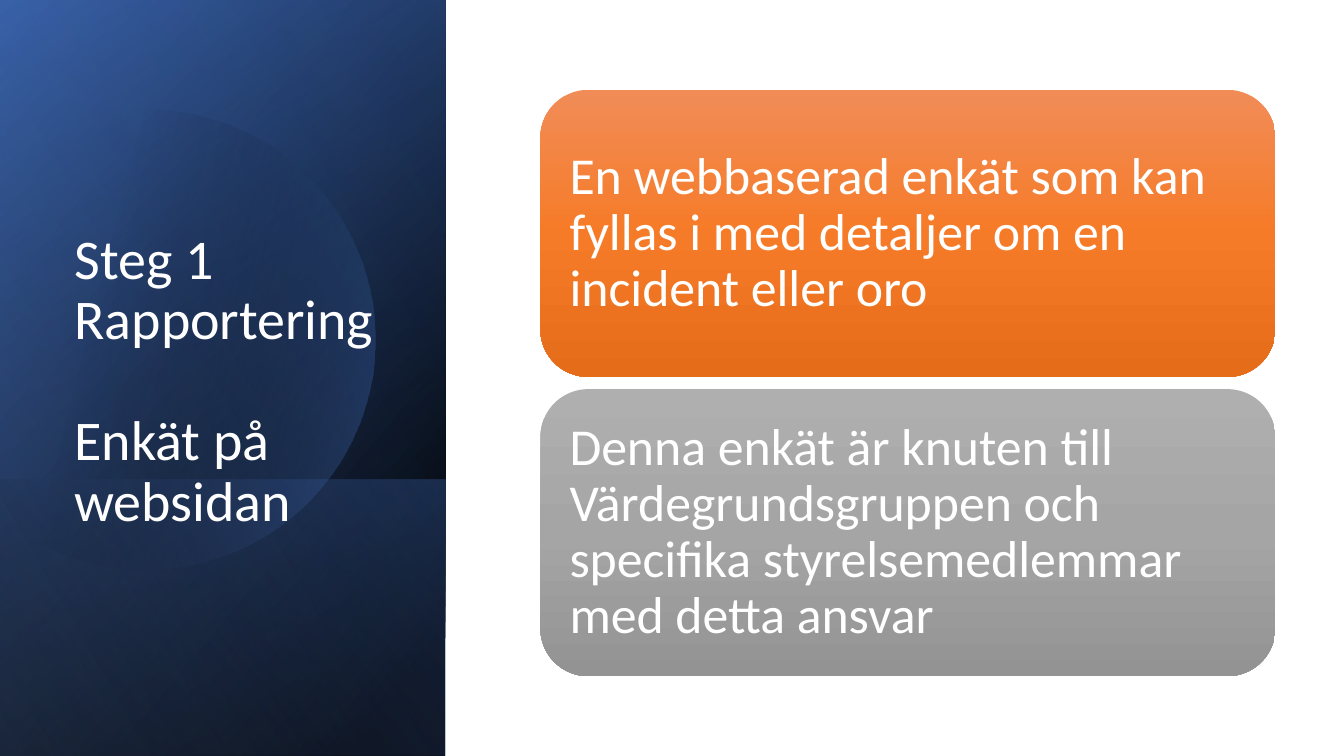
from math import acos, cos, sin

from lxml import etree
from pptx import Presentation
from pptx.dml.color import RGBColor
from pptx.enum.shapes import MSO_SHAPE
from pptx.enum.text import MSO_ANCHOR, MSO_AUTO_SIZE, PP_ALIGN
from pptx.oxml.ns import qn
from pptx.util import Pt

RECTANGLE = MSO_SHAPE.RECTANGLE
ROUNDED = MSO_SHAPE.ROUNDED_RECTANGLE
LEFT = PP_ALIGN.LEFT
MIDDLE, BOTTOM = MSO_ANCHOR.MIDDLE, MSO_ANCHOR.BOTTOM
NO_AUTOFIT = MSO_AUTO_SIZE.NONE

FONT = "Calibri"
WHITE = "FFFFFF"
SLIDE_WIDTH, SLIDE_HEIGHT = 960, 540
PANEL_WIDTH = 318.24
LOWER_TOP = 342.7

HEADING = ["Steg 1 Rapportering", "Enkät på websidan"]
HEADING_BOX = (46, 132.5, 245.5, 252)
CARDS = [
    ("En webbaserad enkät som kan fyllas i med detaljer om en incident eller oro",
     [(0, "F18C57", 100), (50, "F67B28", 100), (100, "E56C19", 100)]),
    ("Denna enkät är knuten till Värdegrundsgruppen och specifika styrelsemedlemmar med detta ansvar",
     [(0, "AFAFAF", 100), (50, "A5A5A5", 100), (100, "939393", 100)]),
]
CARD_LEFT, CARD_TOP, CARD_WIDTH, CARD_HEIGHT, CARD_PITCH = 386, 64.2, 525, 205, 213.8

LAYERS_BELOW = [
    (0, 50, [(8, "000000", 100), (100, "2F5597", 100)]),
    (0, 30, [(0, "000000", 0), (99, "4472C4", 46)]),
    (LOWER_TOP, 130, [(2, "4472C4", 29), (100, "000000", 30)]),
]
DISC_STOPS = [(29, "000000", 0), (100, "4472C4", 43)]
DISC_X, DISC_Y, DISC_RADIUS = 103.7, 242.6, 164.2
DISC_STEPS = 120
LAYER_ABOVE = (0, 120, [(0, "000000", 0), (99, "8FAADC", 11)])


def color(hex_code):
    return RGBColor.from_string(hex_code)


def paint(shape, angle, stops):
    shape.shadow.inherit = False
    shape.line.fill.background()
    gradient = etree.Element(qn("a:gradFill"), rotWithShape="1")
    stop_list = etree.SubElement(gradient, qn("a:gsLst"))
    for position, hex_code, opacity in stops:
        stop = etree.SubElement(stop_list, qn("a:gs"), pos=str(position * 1000))
        tint = etree.SubElement(stop, qn("a:srgbClr"), val=str(color(hex_code)))
        if opacity < 100:
            etree.SubElement(tint, qn("a:alpha"), val=str(opacity * 1000))
    etree.SubElement(gradient, qn("a:lin"), ang=str(angle * 60000), scaled="0")
    shape._element.spPr[1].addnext(gradient)


def add_layer(shapes, top, angle, stops):
    height = SLIDE_HEIGHT - top
    layer = shapes.add_shape(
        RECTANGLE, Pt((PANEL_WIDTH - height) / 2), Pt(top + (height - PANEL_WIDTH) / 2),
        Pt(height), Pt(PANEL_WIDTH))
    layer.rotation = 90
    layer._element.spPr.xfrm.set("flipH", "1")
    paint(layer, angle, stops)


def add_disc(shapes):
    reach = acos(-DISC_X / DISC_RADIUS)
    angles = [reach * (2 * step / DISC_STEPS - 1) for step in range(DISC_STEPS + 1)]
    outline = [(Pt(DISC_X + DISC_RADIUS * cos(a)), Pt(DISC_Y + DISC_RADIUS * sin(a)))
               for a in angles]
    builder = shapes.build_freeform(*outline[0])
    builder.add_line_segments(outline[1:], close=True)
    paint(builder.convert_to_shape(), 14, DISC_STOPS)


def write(frame, lines, size, anchor, gap=0):
    frame.word_wrap = True
    frame.auto_size = NO_AUTOFIT
    frame.vertical_anchor = anchor
    for index, line in enumerate(lines):
        paragraph = frame.add_paragraph() if index else frame.paragraphs[0]
        paragraph.alignment = LEFT
        paragraph.line_spacing = 0.9
        paragraph.space_before = Pt(gap if index else 0)
        run = paragraph.add_run()
        run.text = line
        run.font.name = FONT
        run.font.size = Pt(size)
        run.font.color.rgb = color(WHITE)


def main():
    deck = Presentation()
    deck.slide_width, deck.slide_height = Pt(SLIDE_WIDTH), Pt(SLIDE_HEIGHT)
    slide = deck.slides.add_slide(deck.slide_layouts[5])
    shapes = slide.shapes

    for layer in LAYERS_BELOW:
        add_layer(shapes, *layer)
    add_disc(shapes)
    add_layer(shapes, *LAYER_ABOVE)

    heading = shapes.title
    heading.left, heading.top, heading.width, heading.height = map(Pt, HEADING_BOX)
    write(heading.text_frame, HEADING, 40, BOTTOM, gap=43)
    shapes._spTree.append(heading._element)

    for index, (message, stops) in enumerate(CARDS):
        card = shapes.add_shape(
            ROUNDED, Pt(CARD_LEFT), Pt(CARD_TOP + index * CARD_PITCH),
            Pt(CARD_WIDTH), Pt(CARD_HEIGHT))
        paint(card, 90, stops)
        frame = card.text_frame
        frame.margin_left = frame.margin_right = Pt(10.8)
        frame.margin_top = frame.margin_bottom = Pt(10.8)
        write(frame, [message], 37, MIDDLE)

    deck.save("out.pptx")


if __name__ == "__main__":
    main()
